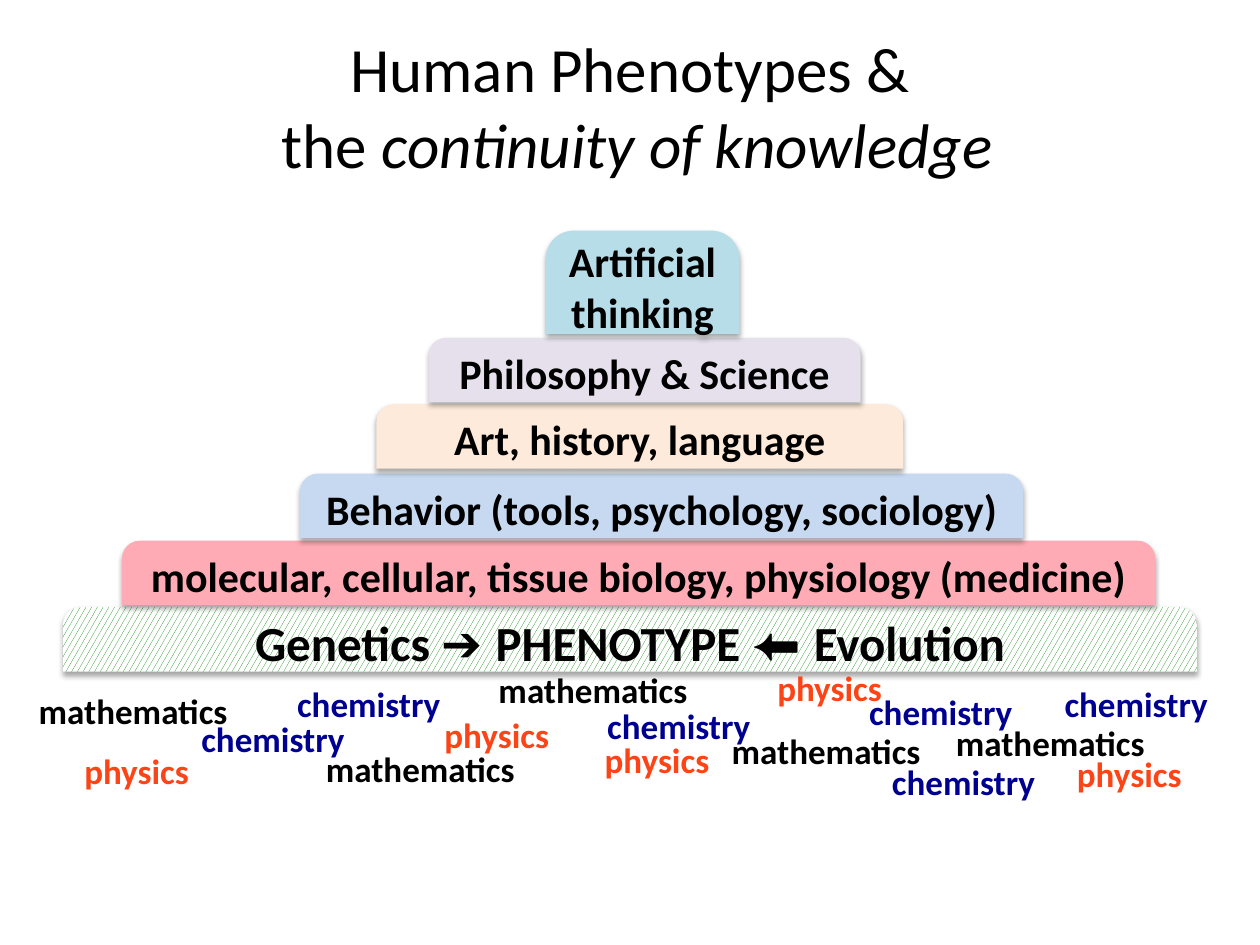
"""Build a slide showing human phenotypes as a pyramid of knowledge."""
from dataclasses import dataclass

from lxml import etree
from pptx import Presentation
from pptx import util as u
from pptx.dml.color import RGBColor
from pptx.enum import dml, shapes, text
from pptx.oxml import ns


@dataclass(frozen=True)
class Theme:
    font: str = "Calibri"
    symbol_font: str = "Arial"
    ink: str = "000000"
    paper: str = "FFFFFF"
    green: str = "008000"
    pink: str = "FEABB5"
    blue: str = "C6D9F1"
    peach: str = "FDEADA"
    lilac: str = "E6E0EC"
    aqua: str = "B7DEE8"
    orange: str = "FC4417"
    navy: str = "000090"
    title_size: int = 36
    base_size: int = 28
    tier_size: int = 24
    word_size: int = 20


@dataclass(frozen=True)
class Tier:
    label: str
    left: float
    top: float
    width: float
    fill: str
    height: float = 1.3


@dataclass(frozen=True)
class Science:
    name: str
    width: float
    color: str
    places: tuple[tuple[float, float], ...]


THEME = Theme()
BASE = Tier("Genetics ➔ PHENOTYPE ⬅ Evolution", 1.27, 12.24, 22.86, THEME.green)
TIERS = (
    Tier("molecular, cellular, tissue biology, physiology (medicine)", 2.46, 10.9, 20.83, THEME.pink),
    Tier("Behavior (tools, psychology, sociology)", 6.05, 9.55, 14.58, THEME.blue),
    Tier("Art, history, language", 7.59, 8.15, 10.62, THEME.peach),
    Tier("Philosophy & Science", 8.64, 6.81, 8.71, THEME.lilac),
    Tier("Artificial thinking", 11, 4.65, 3.91, THEME.aqua, 2.08),
)
SCIENCES = (
    Science("mathematics", 4.37, THEME.ink, (
        (0.53, 13.77), (6.32, 14.94), (9.8, 13.36), (14.5, 14.58), (19.02, 14.43))),
    Science("physics", 2.67, THEME.orange, (
        (1.45, 14.99), (8.71, 14.25), (11.94, 14.76), (15.42, 13.31), (21.46, 15.04))),
    Science("chemistry", 3.43, THEME.navy, (
        (3.81, 14.33), (5.74, 13.64), (11.99, 14.07), (17.27, 13.79), (17.73, 15.21), (21.21, 13.64))),
)


def style_paragraph(paragraph, size: int, color: str = THEME.ink, bold: bool = True,
                    align=text.PP_ALIGN.CENTER) -> None:
    paragraph.alignment = align
    paragraph.font.size = u.Pt(size)
    paragraph.font.bold = bold
    paragraph.font.name = THEME.font
    paragraph.font.color.rgb = RGBColor.from_string(color)


def add_shadow(shape) -> None:
    shape.shadow.inherit = False
    effects = shape._element.spPr.find(ns.qn("a:effectLst"))
    shadow = etree.SubElement(effects, ns.qn("a:outerShdw"), blurRad="40000", dist="23000",
                              dir="5400000", rotWithShape="0")
    color = etree.SubElement(shadow, ns.qn("a:srgbClr"), val=THEME.ink)
    etree.SubElement(color, ns.qn("a:alpha"), val="35000")


def add_tier(slide, tier: Tier, size: int = THEME.tier_size):
    shape = slide.shapes.add_shape(
        shapes.MSO_SHAPE.ROUND_2_SAME_RECTANGLE,
        u.Cm(tier.left), u.Cm(tier.top), u.Cm(tier.width), u.Cm(tier.height))
    shape.adjustments[0] = 0.274
    shape.fill.solid()
    shape.fill.fore_color.rgb = RGBColor.from_string(tier.fill)
    shape.line.fill.background()
    add_shadow(shape)
    frame = shape.text_frame
    frame.vertical_anchor = text.MSO_ANCHOR.MIDDLE
    paragraph = frame.paragraphs[0]
    style_paragraph(paragraph, size)
    for word in tier.label.split(" "):
        if paragraph.runs:
            paragraph.runs[-1].text += " "
        run = paragraph.add_run()
        run.text = word
        run.font.name = THEME.symbol_font if word in "➔⬅" else THEME.font
    return shape


def add_base(slide) -> None:
    fill = add_tier(slide, BASE, THEME.base_size).fill
    fill.patterned()
    fill.pattern = dml.MSO_PATTERN.LARGE_CONFETTI
    fill.fore_color.rgb = RGBColor.from_string(THEME.green)
    fill.back_color.rgb = RGBColor.from_string(THEME.paper)


def add_science(slide, science: Science) -> None:
    for left, top in science.places:
        box = slide.shapes.add_textbox(u.Cm(left), u.Cm(top), u.Cm(science.width), u.Cm(1.12))
        frame = box.text_frame
        frame.word_wrap = False
        frame.auto_size = text.MSO_AUTO_SIZE.SHAPE_TO_FIT_TEXT
        frame.text = science.name
        style_paragraph(frame.paragraphs[0], THEME.word_size, science.color,
                        align=text.PP_ALIGN.LEFT)


def add_title(slide) -> None:
    box = slide.shapes.add_textbox(0, 0, u.Cm(25.4), u.Cm(4.24))
    frame = box.text_frame
    frame.word_wrap = True
    frame.vertical_anchor = text.MSO_ANCHOR.MIDDLE
    paragraph = frame.paragraphs[0]
    style_paragraph(paragraph, THEME.title_size, bold=False)
    paragraph.add_run().text = "Human Phenotypes &"
    paragraph.add_line_break()
    paragraph.add_run().text = " the "
    emphasis = paragraph.add_run()
    emphasis.text = "continuity of knowledge"
    emphasis.font.italic = True


def main() -> None:
    presentation = Presentation()
    presentation.slide_width, presentation.slide_height = u.Cm(25.4), u.Cm(19.05)
    slide = presentation.slides.add_slide(presentation.slide_layouts[6])
    add_title(slide)
    add_base(slide)
    for tier in TIERS:
        add_tier(slide, tier)
    for science in SCIENCES:
        add_science(slide, science)
    presentation.save("out.pptx")


if __name__ == "__main__":
    main()
